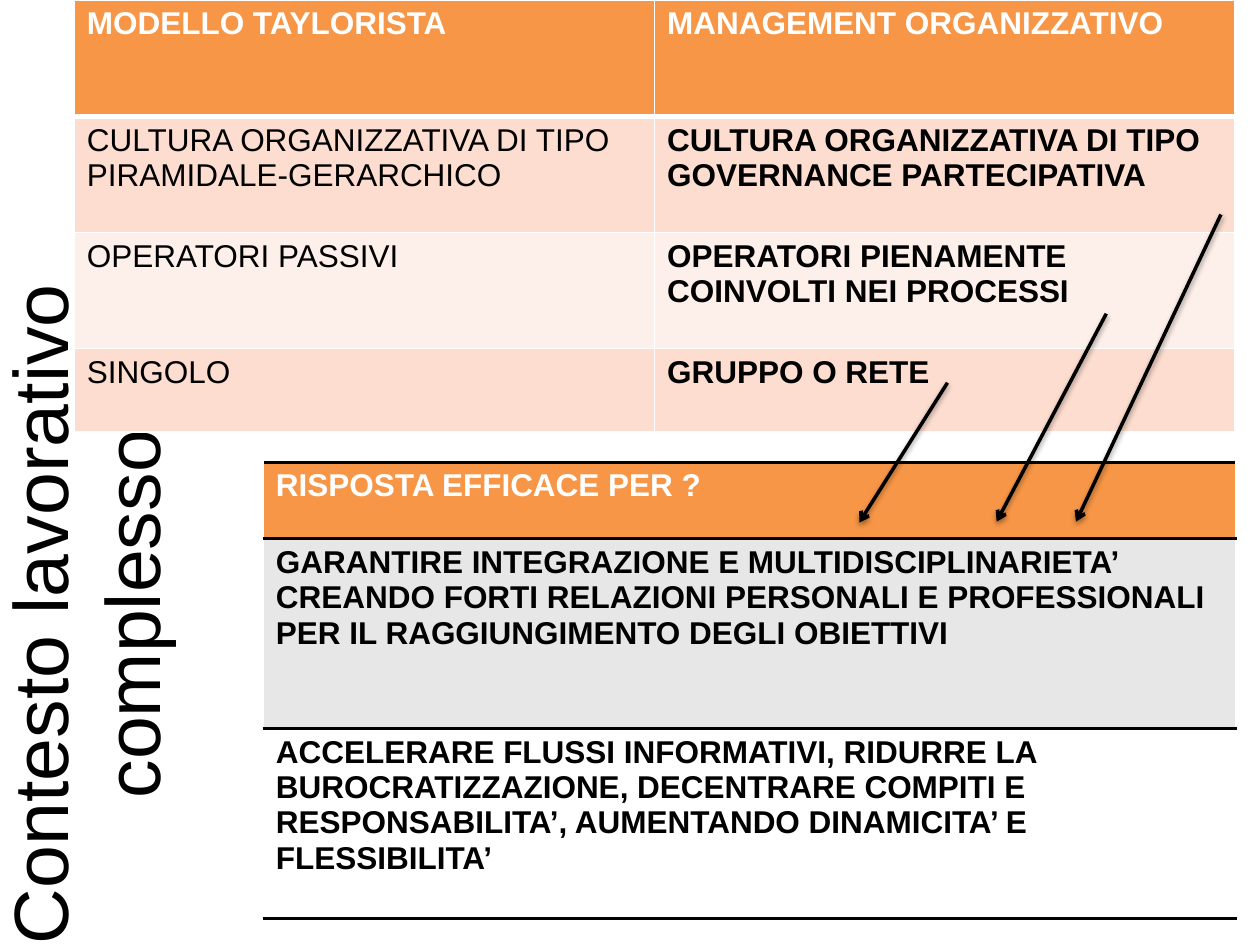
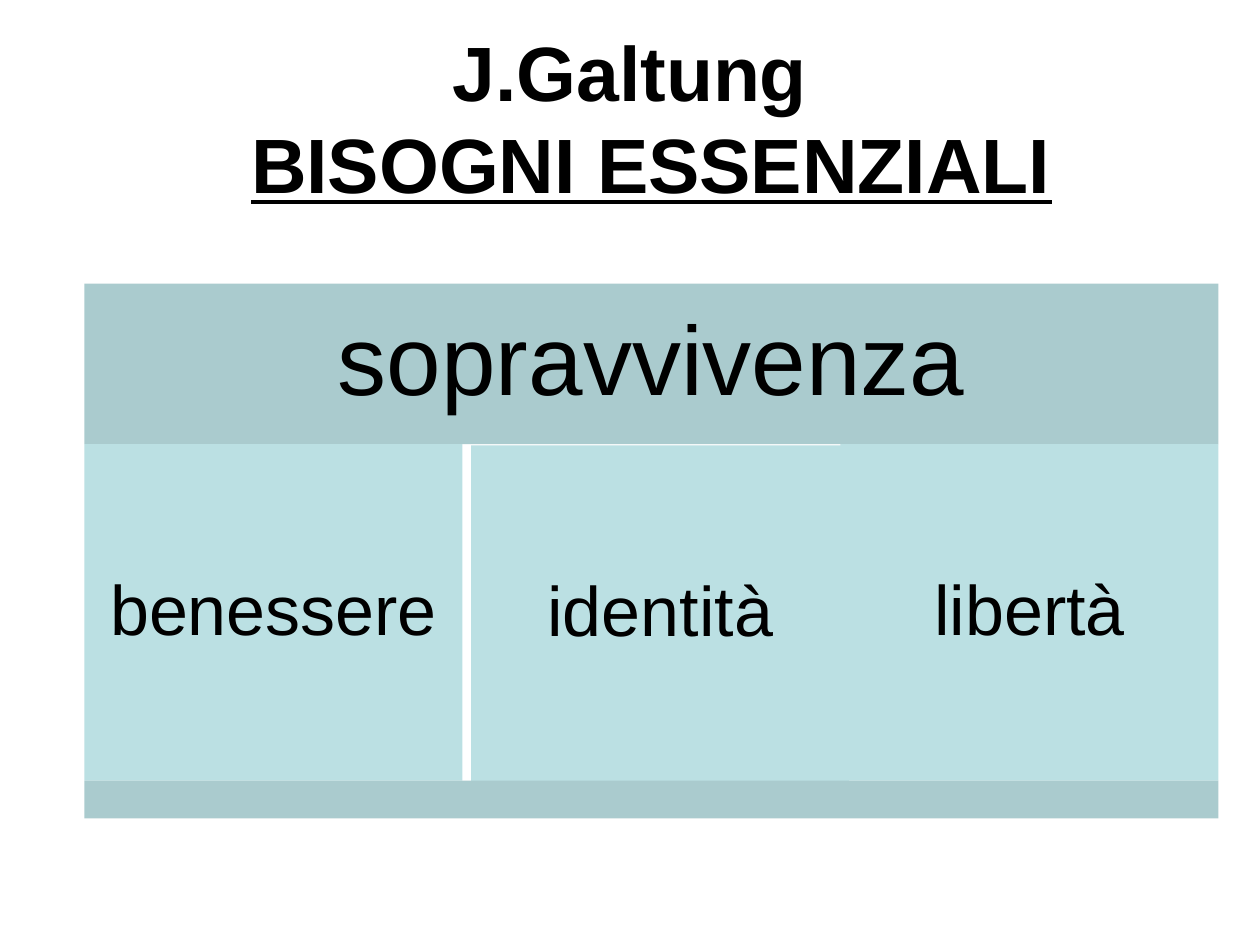
from lxml.etree import SubElement
from pptx import Presentation
from pptx.dml.color import RGBColor
from pptx.enum.shapes import MSO_CONNECTOR, MSO_SHAPE
from pptx.enum.text import MSO_ANCHOR, MSO_AUTO_SIZE, PP_ALIGN
from pptx.oxml import parse_xml
from pptx.oxml.ns import nsdecls, qn
from pptx.util import Inches, Pt

FONT = "Arial"
BLACK, WHITE = "000000", "FFFFFF"
ORANGE, PEACH, PALE_PEACH, GREY = "F79646", "FCDDCF", "FDEFE9", "E7E7E7"
TEAL, LIGHT_TEAL = "AACBCE", "BBE0E3"
WIDTH, HEIGHT = Inches(10), Inches(7.5)
TITLE_ONLY = 5

MODELS = [
    ("MODELLO TAYLORISTA", "MANAGEMENT ORGANIZZATIVO"),
    ("CULTURA ORGANIZZATIVA DI TIPO PIRAMIDALE-GERARCHICO",
     "CULTURA ORGANIZZATIVA DI TIPO GOVERNANCE PARTECIPATIVA"),
    ("OPERATORI PASSIVI", "OPERATORI PIENAMENTE COINVOLTI NEI PROCESSI"),
    ("SINGOLO", "GRUPPO O RETE"),
]
ANSWERS = [
    ("RISPOSTA EFFICACE PER ?",),
    ("GARANTIRE INTEGRAZIONE E MULTIDISCIPLINARIETA’ CREANDO FORTI RELAZIONI "
     "PERSONALI E PROFESSIONALI PER IL RAGGIUNGIMENTO DEGLI OBIETTIVI",),
    ("ACCELERARE FLUSSI INFORMATIVI, RIDURRE LA BUROCRATIZZAZIONE, DECENTRARE "
     "COMPITI E RESPONSABILITA’, AUMENTANDO DINAMICITA’ E FLESSIBILITA’",),
]
ARROWS = [
    (96.9, 22.7, 85.4, 55.2),
    (75.2, 40.5, 68.2, 55.3),
    (87.8, 33.2, 79.1, 55.2),
]


def rgb(color):
    return RGBColor.from_string(color)


def across(percent):
    return round(WIDTH * percent / 100)


def down(percent):
    return round(HEIGHT * percent / 100)


def box(left, top, width, height):
    return across(left), down(top), across(width), down(height)


def format_runs(p, size, color=BLACK, bold=False):
    for r in p.runs:
        r.font.name = FONT
        r.font.size = Pt(size)
        r.font.bold = bold
        r.font.color.rgb = rgb(color)


def add_title(slide, area, lines, bold=False):
    sp = slide.shapes.title
    sp.left, sp.top, sp.width, sp.height = area
    tf = sp.text_frame
    tf.auto_size = MSO_AUTO_SIZE.NONE
    tf.word_wrap = True
    tf.vertical_anchor = MSO_ANCHOR.MIDDLE
    p = tf.paragraphs[0]
    p.text = "\v".join(lines)
    p.alignment = PP_ALIGN.CENTER
    format_runs(p, 44, bold=bold)
    return sp


def set_borders(cell, borders):
    tc_pr = cell._tc.get_or_add_tcPr()
    for side in "LRTB":
        if side in borders:
            color, width = borders[side]
            ln = SubElement(tc_pr, qn(f"a:ln{side}"), w=str(Pt(width)))
            fill = SubElement(ln, qn("a:solidFill"))
            SubElement(fill, qn("a:srgbClr"), val=color)


def add_table(slide, left, top, width, heights, rows, fills, borders, is_bold):
    columns = len(rows[0])
    frame = slide.shapes.add_table(len(rows), columns,
                                   *box(left, top, width, sum(heights)))
    table = frame.table
    table.first_row = table.horz_banding = False
    for column in table.columns:
        column.width = across(width / columns)
    for i, texts in enumerate(rows):
        table.rows[i].height = down(heights[i])
        for j, text in enumerate(texts):
            cell = table.cell(i, j)
            set_borders(cell, borders[i])
            cell.fill.solid()
            cell.fill.fore_color.rgb = rgb(fills[i])
            cell.text_frame.text = text
            format_runs(cell.text_frame.paragraphs[0], 18,
                        BLACK if i else WHITE, is_bold(i, j))


def add_arrow(slide, x1, y1, x2, y2):
    line = slide.shapes.add_connector(MSO_CONNECTOR.STRAIGHT, across(x1),
                                      down(y1), across(x2), down(y2))
    line.line.width = Pt(2)
    line.line.color.rgb = rgb(BLACK)
    SubElement(line.line._get_or_add_ln(), qn("a:tailEnd"), type="arrow")
    line._element.spPr.append(parse_xml(
        f'<a:effectLst {nsdecls("a")}><a:outerShdw blurRad="40000" dist="20000" '
        f'dir="5400000" rotWithShape="0"><a:srgbClr val="{BLACK}">'
        '<a:alpha val="38000"/></a:srgbClr></a:outerShdw></a:effectLst>'))


def add_block(slide, area, color, text="", size=40, inset=0.17):
    sp = slide.shapes.add_shape(MSO_SHAPE.RECTANGLE, *area)
    sp.shadow.inherit = False
    sp.fill.solid()
    sp.fill.fore_color.rgb = rgb(color)
    sp.line.fill.background()
    if text:
        tf = sp.text_frame
        tf.word_wrap = True
        tf.vertical_anchor = MSO_ANCHOR.MIDDLE
        tf.margin_left = tf.margin_right = Inches(inset)
        tf.margin_top = tf.margin_bottom = Inches(inset)
        p = tf.paragraphs[0]
        p.text = text
        p.alignment = PP_ALIGN.CENTER
        p.line_spacing = 0.9
        format_runs(p, size)


def build_work_context(slide):
    title = add_title(slide, box(-30.6, 61.9, 74.5, 6.2),
                      ["Contesto lavorativo complesso"])
    title.rotation = 270

    thin, thick, rule = (WHITE, 1), (WHITE, 3), (BLACK, 2)
    grid = dict.fromkeys("LRTB", thin)
    add_table(slide, 5.9, 0, 92.1, [12.3, 12.3, 12.3, 8.8], MODELS,
              [ORANGE, PEACH, PALE_PEACH, PEACH],
              [grid | {"B": thick}, grid | {"T": thick}, grid, grid],
              lambda i, j: i == 0 or j == 1)
    add_table(slide, 20.9, 48.9, 77.2, [8.1, 20.1, 20.1], ANSWERS,
              [ORANGE, GREY, WHITE],
              [{"T": rule, "B": rule}, {"T": rule}, {"B": rule}],
              lambda i, j: True)
    for ends in ARROWS:
        add_arrow(slide, *ends)


def build_needs(slide):
    title = add_title(slide, box(2.8, 4, 96.1, 16.7),
                      ["J.Galtung ", " "], bold=True)
    p = title.text_frame.paragraphs[0]
    r = p.add_run()
    r.text = "BISOGNI ESSENZIALI"
    r.font.underline = True
    format_runs(p, 44, bold=True)

    left, width, top, body_top, base_top = 6.7, 90, 30, 47, 82.6
    column, body = width / 3, base_top - body_top
    add_block(slide, box(left, top, width, body_top - top), TEAL,
              "sopravvivenza", 56, 0.23)
    needs = [("benessere", 0, 0), ("identità", 0.7, 0.13), ("libertà", 0, 0)]
    for i, (need, shift, drop) in enumerate(needs):
        add_block(slide, box(left + i * column + shift, body_top + drop,
                             column, body), LIGHT_TEAL, need)
    add_block(slide, box(left, base_top, width, 4), TEAL)


def main():
    prs = Presentation()
    prs.slide_width, prs.slide_height = WIDTH, HEIGHT
    for build in (build_work_context, build_needs):
        build(prs.slides.add_slide(prs.slide_layouts[TITLE_ONLY]))
    prs.save("out.pptx")


if __name__ == "__main__":
    main()
